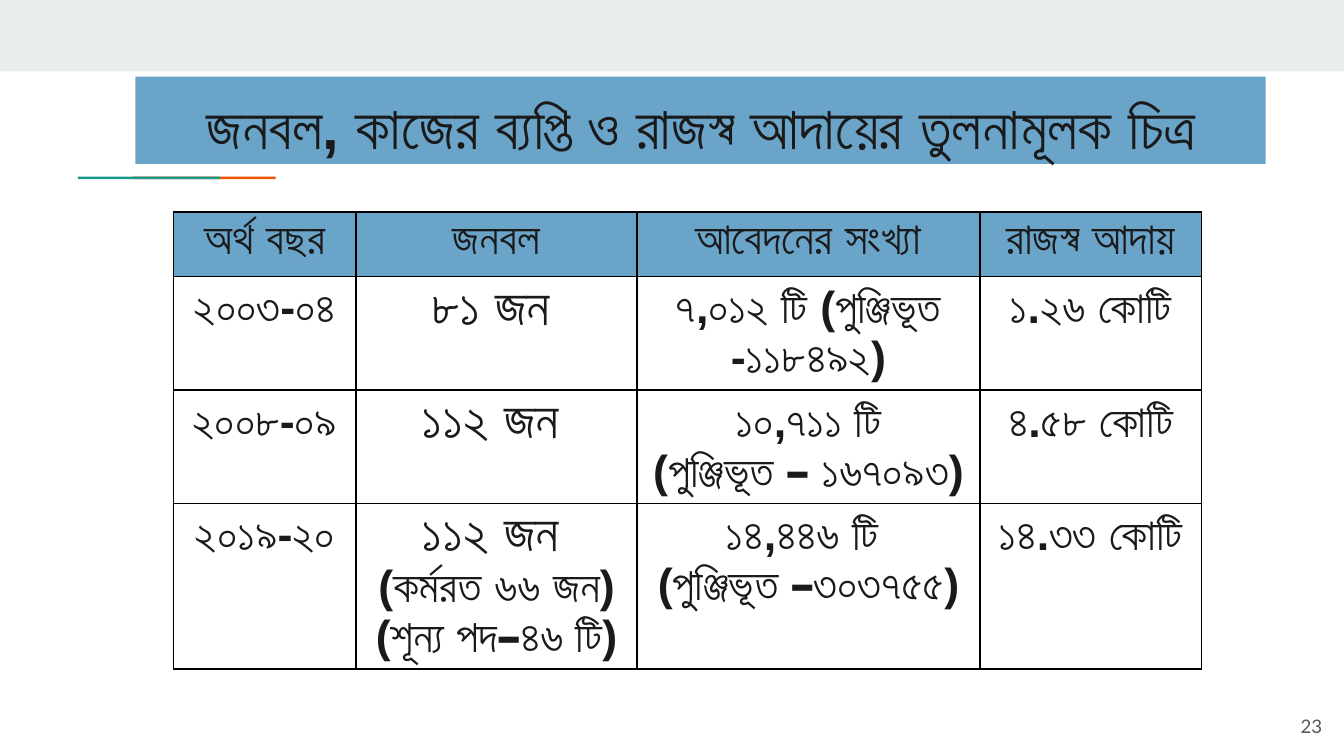
from dataclasses import dataclass

from lxml import etree
from pptx import Presentation
from pptx import util as u
from pptx.dml.color import RGBColor
from pptx.enum import shapes, text
from pptx.oxml import ns


@dataclass(frozen=True)
class Theme:
    blue: str = "6AA4C8"
    band: str = "E9EDEE"
    green: str = "1A9988"
    orange: str = "EB5600"
    ink: str = "1A1A1A"
    grey: str = "595959"
    white: str = "FFFFFF"
    border: str = "000000"
    font: str = "Arial"
    number_font: str = "Lato"
    title: int = 32
    count: int = 28
    body: int = 24
    number: int = 10


T = Theme()
BOLD = {"name": T.font, "bold": True}
CENTER = text.PP_ALIGN.CENTER
TOP = text.MSO_ANCHOR.TOP

HEADERS = ["অর্থ বছর", "জনবল", "আবেদনের সংখ্যা", "রাজস্ব আদায়"]
RECORDS = [
    ["২০০৩-০৪", "৮১ জন", "৭,০১২ টি (পুঞ্জিভূত -১১৮৪৯২)", "১.২৬ কোটি"],
    ["২০০৮-০৯", "১১২ জন", "১০,৭১১ টি\n(পুঞ্জিভূত – ১৬৭০৯৩)", "৪.৫৮ কোটি"],
    ["২০১৯-২০", "১১২ জন\n(কর্মরত ৬৬ জন)\n(শূন্য পদ–৪৬ টি)",
     "১৪,৪৪৬ টি \n(পুঞ্জিভূত –৩০৩৭৫৫)", "১৪.৩৩ কোটি"],
]
COLUMNS = [3.45, 5.31, 6.48, 4.19]
ROWS = [1.22, 1.63, 1.63, 2.64]


def apply(obj, values):
    for name, value in values.items():
        setattr(obj, name, value)


def add_run(p, words, size, color=T.ink, **font):
    r = p.add_run()
    r.text = words
    apply(r.font, {"size": u.Pt(size), **(font or BOLD)})
    r.font.color.rgb = RGBColor.from_string(color)


def add_rect(slide, box, color):
    sp = slide.shapes.add_shape(shapes.MSO_SHAPE.RECTANGLE, *map(u.Cm, box))
    sp.shadow.inherit = False
    sp.fill.solid()
    sp.fill.fore_color.rgb = RGBColor.from_string(color)
    sp.line.fill.background()
    return sp


def set_frame(tf, anchor):
    inset = u.Cm(0.25)
    apply(tf, {"word_wrap": True, "vertical_anchor": anchor,
               "margin_left": inset, "margin_right": inset,
               "margin_top": inset, "margin_bottom": inset})


def add_accent(slide, box):
    x, y, w, h = box
    part = w * 0.72
    add_rect(slide, (x + w - part, y, part, h), T.orange)
    add_rect(slide, (x, y, part, h), T.green)


def add_title(slide, box, words):
    sp = add_rect(slide, box, T.blue)
    set_frame(sp.text_frame, TOP)
    p = sp.text_frame.paragraphs[0]
    p.alignment = CENTER
    add_run(p, words, T.title)


def add_borders(cell):
    props = cell._tc.get_or_add_tcPr()
    for i, side in enumerate(("a:lnL", "a:lnR", "a:lnT", "a:lnB")):
        ln = etree.Element(ns.qn(side), w=str(u.Pt(1)))
        fill = etree.SubElement(ln, ns.qn("a:solidFill"))
        etree.SubElement(fill, ns.qn("a:srgbClr"), val=T.border)
        props.insert(i, ln)


def fill_cell(cell, words, color, first_size):
    cell.fill.solid()
    cell.fill.fore_color.rgb = RGBColor.from_string(color)
    add_borders(cell)
    tf = cell.text_frame
    for i, line in enumerate(words.split("\n")):
        p = tf.add_paragraph() if i else tf.paragraphs[0]
        p.alignment = CENTER
        add_run(p, line, T.body if i else first_size)
        if not i and first_size == T.count:
            add_run(p, " ", T.body)


def add_comparison(slide, box):
    x, y, w, h = box
    frame = slide.shapes.add_table(len(ROWS), len(COLUMNS), *map(u.Cm, box))
    table = frame.table
    for column, width in zip(table.columns, COLUMNS):
        column.width = u.Cm(w * width / sum(COLUMNS))
    for row, height in zip(table.rows, ROWS):
        row.height = u.Cm(h * height / sum(ROWS))
    for i, record in enumerate([HEADERS] + RECORDS):
        for j, words in enumerate(record):
            size = T.count if i and j == 1 else T.body
            fill_cell(table.cell(i, j), words, T.white if i else T.blue, size)


def add_number(slide, box, words):
    tf = slide.shapes.add_textbox(*map(u.Cm, box)).text_frame
    set_frame(tf, text.MSO_ANCHOR.MIDDLE)
    p = tf.paragraphs[0]
    p.alignment = text.PP_ALIGN.RIGHT
    add_run(p, words, T.number, T.grey, name=T.number_font)


def main():
    prs = Presentation()
    apply(prs, {"slide_width": u.Cm(25.4), "slide_height": u.Cm(14.29)})
    slide = prs.slides.add_slide(prs.slide_layouts[6])
    add_rect(slide, (0, 0, 25.4, 1.35), T.band)
    add_accent(slide, (1.47, 3.34, 3.74, 0.05))
    add_title(slide, (2.56, 1.45, 21.36, 1.65),
              "জনবল, কাজের ব্যপ্তি ও রাজস্ব আদায়ের তুলনামূলক চিত্র")
    add_comparison(slide, (3.28, 4.01, sum(COLUMNS), sum(ROWS)))
    add_number(slide, (23.72, 13.18, 1.52, 1.09), "23")
    prs.save("out.pptx")


if __name__ == "__main__":
    main()
